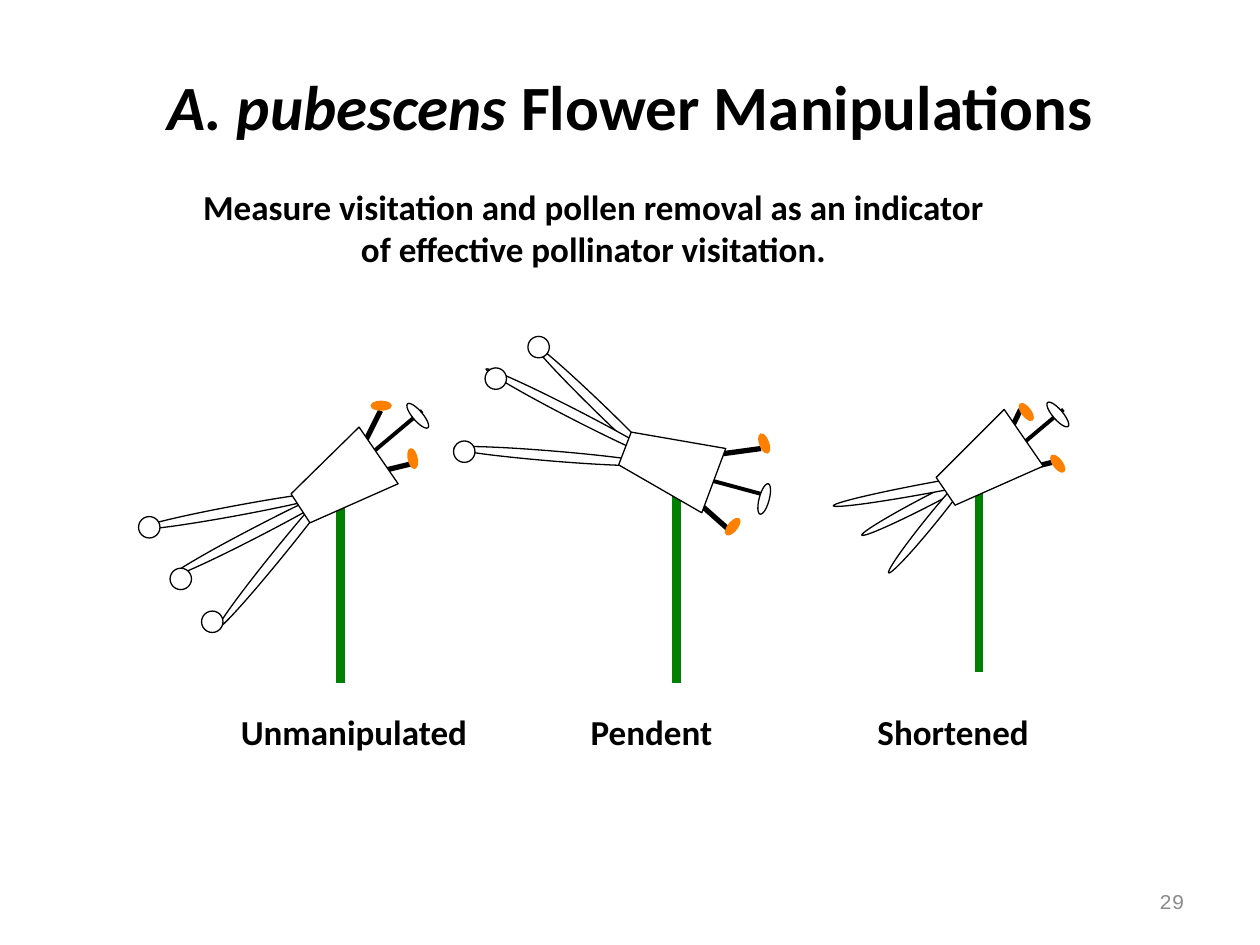
"""Build the slide comparing three flower manipulations of A. pubescens."""
from dataclasses import dataclass

from lxml.etree import SubElement
from pptx import Presentation
from pptx.dml.color import RGBColor
from pptx.enum.shapes import MSO_CONNECTOR, MSO_SHAPE
from pptx.enum.text import MSO_ANCHOR, PP_ALIGN
from pptx.oxml.ns import qn
from pptx.util import Inches, Pt


@dataclass(frozen=True)
class Theme:
    ink: RGBColor = RGBColor(0x00, 0x00, 0x00)
    petal: RGBColor = RGBColor(0xFF, 0xFF, 0xFF)
    stem: RGBColor = RGBColor(0x00, 0x80, 0x00)
    anther: RGBColor = RGBColor(0xFF, 0x80, 0x00)
    number: RGBColor = RGBColor(0x8C, 0x8C, 0x8C)
    font: str = "Calibri"
    number_font: str = "Courier New"
    title_size: int = 36
    body_size: int = 20
    number_size: int = 12
    outline: float = 0.75
    style_line: float = 2.25
    filament_line: float = 3
    stem_line: float = 5


theme = Theme()
thickness = 0.08
knob_size = 0.17
anther_length = 0.17
stigma_length = 0.25
stem_height = 1.5

flowers = [
    {
        "label": ("Unmanipulated", 1.81, 2.0),
        "stem": (2.7, 3.92),
        "spurs": [(1.27, 4.17, 1.58, 332.6), (1.44, 4.33, 1.58, 309.1), (1.1, 4.01, 1.58, 349.5)],
        "knobs": [(1.35, 4.51), (1.6, 4.85), (1.1, 4.1)],
        "filaments": [(2.85, 3.6, 3.02, 3.26), (2.94, 3.76, 3.27, 3.68)],
        "style": (2.85, 3.68, 3.35, 3.26),
        "stigma": (3.19, 3.26, 49.4),
        "body": [(2.85, 3.39), (2.31, 3.92), (2.46, 4.15), (3.16, 3.84)],
        "anthers": [(2.94, 3.18, 0), (3.19, 3.6, 77.7)],
    },
    {
        "label": ("Pendent", 4.58, 1.18),
        "stem": (5.37, 3.92),
        "spurs": [(4.02, 3.25, 1.58, 44.1), (3.77, 3.25, 1.58, 27.2), (3.6, 3.58, 1.58, 4.7)],
        "knobs": [(3.85, 2.92), (4.19, 2.67), (3.6, 3.5)],
        "filaments": [(5.67, 3.61, 6.04, 3.56), (5.52, 3.97, 5.78, 4.2)],
        "style": (5.41, 3.75, 6.04, 3.92),
        "stigma": (5.94, 3.92, 105),
        "body": [(5.76, 3.56), (5.01, 3.43), (4.91, 3.69), (5.57, 4.07)],
        "anthers": [(5.98, 3.48, 70), (5.73, 4.14, 129.1)],
    },
    {
        "label": ("Shortened", 6.86, 1.41),
        "stem": (7.77, 3.83),
        "spurs": [(6.77, 3.92, 1.25, 332.6), (6.85, 4.08, 1.1, 309.1), (6.6, 3.83, 1.58, 349.5)],
        "knobs": [],
        "filaments": [(7.94, 3.58, 8.1, 3.25), (8.02, 3.75, 8.35, 3.67)],
        "style": (7.94, 3.67, 8.44, 3.25),
        "stigma": (8.27, 3.25, 49.4),
        "body": [(7.97, 3.25), (7.43, 3.79), (7.58, 4.01), (8.28, 3.7)],
        "anthers": [(8.06, 3.23, 53.1), (8.31, 3.64, 53.1)],
    },
]

presentation = Presentation()
presentation.slide_width = Inches(10)
presentation.slide_height = Inches(7.5)
slide = presentation.slides.add_slide(presentation.slide_layouts[5])

title = slide.shapes.title
title.left, title.top = Inches(0), Inches(0)
title.width, title.height = Inches(10), Inches(1.67)
title.text_frame.vertical_anchor = MSO_ANCHOR.MIDDLE
paragraph = title.text_frame.paragraphs[0]
paragraph.alignment = PP_ALIGN.CENTER
for text, italic in [("A. pubescens ", True), ("Flower Manipulations", False)]:
    run = paragraph.add_run()
    run.text = text
    run.font.name = theme.font
    run.font.size = Pt(theme.title_size)
    run.font.bold = True
    run.font.italic = italic
    run.font.color.rgb = theme.ink


def add_line(start_x, start_y, end_x, end_y, color, width):
    line = slide.shapes.add_connector(
        MSO_CONNECTOR.STRAIGHT, Inches(start_x), Inches(start_y), Inches(end_x), Inches(end_y)
    )
    line.line.color.rgb = color
    line.line.width = Pt(width)
    SubElement(line.line._get_or_add_ln().getparent(), qn("a:effectLst"))


def add_ellipse(left, top, width, height, angle, outlined=True):
    ellipse = slide.shapes.add_shape(
        MSO_SHAPE.OVAL, Inches(left), Inches(top), Inches(width), Inches(height)
    )
    ellipse.rotation = angle
    ellipse.shadow.inherit = False
    ellipse.fill.solid()
    ellipse.fill.fore_color.rgb = theme.petal if outlined else theme.anther
    if outlined:
        ellipse.line.color.rgb = theme.ink
        ellipse.line.width = Pt(theme.outline)
    else:
        ellipse.line.fill.background()


for flower in flowers:
    stem_x, stem_top = flower["stem"]
    add_line(stem_x, stem_top, stem_x, stem_top + stem_height, theme.stem, theme.stem_line)
    for left, top, length, angle in flower["spurs"]:
        add_ellipse(left, top, length, thickness, angle)
    for left, top in flower["knobs"]:
        add_ellipse(left, top, knob_size, knob_size, 0)
    for filament in flower["filaments"]:
        add_line(*filament, theme.ink, theme.filament_line)
    add_line(*flower["style"], theme.ink, theme.style_line)
    left, top, angle = flower["stigma"]
    add_ellipse(left, top, stigma_length, thickness, angle)

    corners = [(Inches(x), Inches(y)) for x, y in flower["body"]]
    builder = slide.shapes.build_freeform(*corners[0])
    builder.add_line_segments(corners[1:], close=True)
    body = builder.convert_to_shape()
    body.shadow.inherit = False
    body.fill.solid()
    body.fill.fore_color.rgb = theme.petal
    body.line.color.rgb = theme.ink
    body.line.width = Pt(theme.outline)

    for left, top, angle in flower["anthers"]:
        add_ellipse(left, top, anther_length, thickness, angle, outlined=False)

heading = "Measure visitation and pollen removal as an indicator of effective pollinator visitation."
body_style = (theme.font, theme.body_size, theme.ink, True, PP_ALIGN.CENTER, MSO_ANCHOR.TOP)
number_style = (
    theme.number_font, theme.number_size, theme.number, False, PP_ALIGN.RIGHT, MSO_ANCHOR.MIDDLE
)
texts = [(heading, 1.5, 1.42, 6.42, 0.77, True, body_style)]
for flower in flowers:
    text, left, width = flower["label"]
    texts.append((text, left, 5.59, width, 0.43, False, body_style))
texts.append(("29", 7.17, 6.95, 2.33, 0.4, True, number_style))

for text, left, top, width, height, wrap, style in texts:
    font_name, size, color, bold, alignment, anchor = style
    box = slide.shapes.add_textbox(Inches(left), Inches(top), Inches(width), Inches(height))
    box.text_frame.text = text
    box.text_frame.word_wrap = wrap
    box.text_frame.vertical_anchor = anchor
    paragraph = box.text_frame.paragraphs[0]
    paragraph.alignment = alignment
    font = paragraph.runs[0].font
    font.name = font_name
    font.size = Pt(size)
    font.bold = bold
    font.color.rgb = color

presentation.save("out.pptx")
